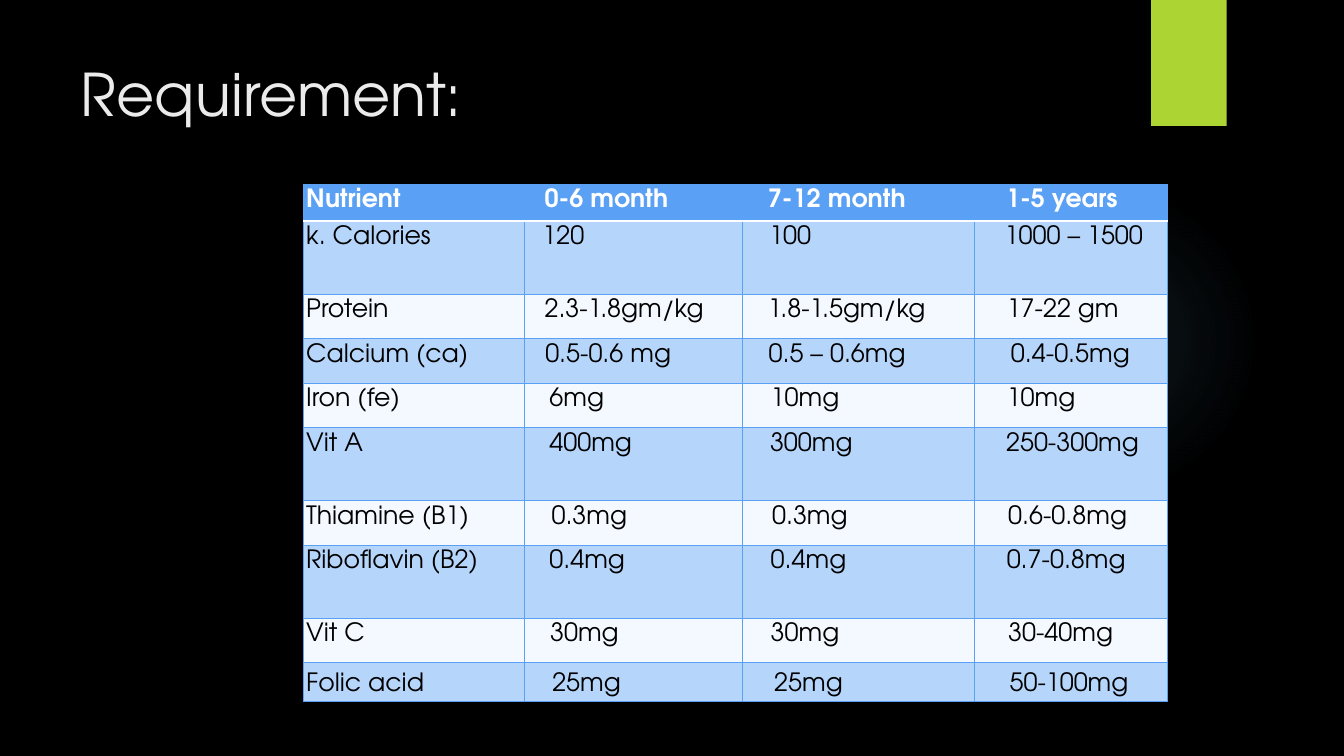
from lxml import etree
from pptx import Presentation
from pptx.dml.color import RGBColor
from pptx.enum.shapes import MSO_SHAPE
from pptx.enum.text import MSO_ANCHOR, PP_ALIGN
from pptx.oxml import parse_xml
from pptx.oxml.ns import nsdecls, qn
from pptx.util import Inches, Pt

OVAL, RECT = MSO_SHAPE.OVAL, MSO_SHAPE.RECTANGLE
TOP, LEFT = MSO_ANCHOR.TOP, PP_ALIGN.LEFT
FONT = "TeX Gyre Adventor"
COLORS = {
    "back": "000000", "ink": "000000", "title": "EBEBEB", "white": "FFFFFF",
    "bar": "ACD433", "glow": "7AC4F0", "head": "5AA0F5",
    "band": "B5D5FB", "plain": "F4F8FF",
}
WIDE, HIGH = 13.33, 7.5
UNIT = HIGH / 9  # the slide is a grid of 16 columns by 9 rows

COLS = (2.63, 2.6, 2.76, 2.3)
HEAD, LOW, TALL, LAST = 0.43, 0.53, 0.87, 0.46
NAME_PAD = 2
# row height, texts, left indents in points of the value columns
ROWS = [
    (HEAD, ("Nutrient", "0-6 month", "7-12 month", "1-5 years"), (14.5, 18, 22.5)),
    (TALL, ("k. Calories", "120", "100", "1000 – 1500"), (13, 19, 21.5)),
    (LOW, ("Protein", "2.3-1.8gm/kg", "1.8-1.5gm/kg", "17-22 gm"), (14.5, 18, 23)),
    (LOW, ("Calcium (ca)", "0.5-0.6 mg", "0.5 – 0.6mg", "0.4-0.5mg"), (15, 18.5, 26)),
    (LOW, ("Iron (fe)", "6mg", "10mg", "10mg"), (18, 20, 23)),
    (TALL, ("Vit A", "400mg", "300mg", "250-300mg"), (18, 19.5, 22.5)),
    (LOW, ("Thiamine (B1)", "0.3mg", "0.3mg", "0.6-0.8mg"), (19.5, 21, 24)),
    (TALL, ("Riboflavin (B2)", "0.4mg", "0.4mg", "0.7-0.8mg"), (18, 20, 23)),
    (LOW, ("Vit C", "30mg", "30mg", "30-40mg"), (18.5, 20, 24)),
    (LAST, ("Folic acid", "25mg", "25mg", "50-100mg"), (20, 22.5, 25)),
]


def rgb(name):
    return RGBColor.from_string(COLORS[name])


def grid(*spans):
    return [Inches(span * UNIT) for span in spans]


def edge(cell, side, color, width):
    """Add one border; sides must come in the order L, R, T, B."""
    line = etree.SubElement(cell._tc.get_or_add_tcPr(), qn("a:ln" + side), w=str(Pt(width)))
    fill = etree.SubElement(line, qn("a:solidFill"))
    etree.SubElement(fill, qn("a:srgbClr"), val=COLORS[color])


class Page:
    def __init__(self, deck):
        self.slide = deck.slides.add_slide(deck.slide_layouts[5])
        back = self.slide.background.fill
        back.solid()
        back.fore_color.rgb = rgb("back")

    def style(self, para, size, color, bold=False):
        para.alignment = LEFT
        font = para.font
        font.name, font.size, font.bold = FONT, Pt(size), bold
        font.color.rgb = rgb(color)

    def title(self, text, *box):
        shape = self.slide.shapes.title
        shape.left, shape.top, shape.width, shape.height = grid(*box)
        frame = shape.text_frame
        frame.text = text
        frame.vertical_anchor, frame.word_wrap = TOP, True
        frame.margin_left = frame.margin_right = frame.margin_bottom = 0
        frame.margin_top = Inches(0.01)
        self.style(frame.paragraphs[0], 42, "title")

    def shape(self, kind, color, *box):
        shape = self.slide.shapes.add_shape(kind, *grid(*box))
        shape.shadow.inherit = False
        shape.fill.solid()
        shape.fill.fore_color.rgb = rgb(color)
        shape.line.fill.background()
        return shape

    def glow(self, color, stops, *box):
        """Draw a disc that fades out through (position, opacity) percents."""
        disc = self.shape(OVAL, color, *box)
        marks = "".join(
            f'<a:gs pos="{pos * 1000}"><a:srgbClr val="{COLORS[color]}">'
            f'<a:alpha val="{alpha * 1000}"/></a:srgbClr></a:gs>'
            for pos, alpha in stops)
        fade = parse_xml(
            f'<a:gradFill {nsdecls("a")}><a:gsLst>{marks}</a:gsLst><a:path path="circle">'
            '<a:fillToRect l="50000" t="50000" r="50000" b="50000"/></a:path></a:gradFill>')
        props = disc._element.spPr
        props.replace(props.find(qn("a:solidFill")), fade)

    def cell(self, cell, text, pad, row):
        head = row == 0
        cell.text = text
        cell.margin_left = cell.margin_right = cell.margin_bottom = 0
        cell.margin_top = 0 if head else Inches(0.05)
        cell.vertical_anchor = TOP
        para = cell.text_frame.paragraphs[0]
        para._p.get_or_add_pPr().set("marL", str(Pt(pad)))
        if head:
            para.line_spacing = Pt(19.6)
        elif row == len(ROWS) - 1:
            para.line_spacing = Pt(20.9)
        self.style(para, 18, "white" if head else "ink", head)
        for side in "LRTB":
            rule = (row, side) in ((0, "B"), (1, "T"))
            edge(cell, side, *(("white", 1.5) if rule else ("head", 0.75)))
        cell.fill.solid()
        cell.fill.fore_color.rgb = rgb("head" if head else "band" if row % 2 else "plain")

    def table(self, left, top):
        high = sum(row[0] for row in ROWS)
        box = grid(left, top, sum(COLS), high)
        table = self.slide.shapes.add_table(len(ROWS), len(COLS), *box).table
        for col, wide in zip(table.columns, grid(*COLS)):
            col.width = wide
        for r, (tall, texts, pads) in enumerate(ROWS):
            table.rows[r].height = grid(tall)[0]
            for c, (text, pad) in enumerate(zip(texts, (NAME_PAD, *pads))):
                self.cell(table.cell(r, c), text, pad, r)


def main():
    deck = Presentation()
    deck.slide_width, deck.slide_height = Inches(WIDE), Inches(HIGH)
    page = Page(deck)
    page.glow("glow", ((0, 7), (36, 6), (69, 0), (100, 0)), 11.29, 2.2, 3.7, 3.7)
    page.shape(RECT, "bar", 13.7, 0, 0.9, 1.5)
    page.title("Requirement:", 0.96, 0.67, 4.85, 0.86)
    page.table(3.61, 2.2)
    deck.save("out.pptx")


if __name__ == "__main__":
    main()
